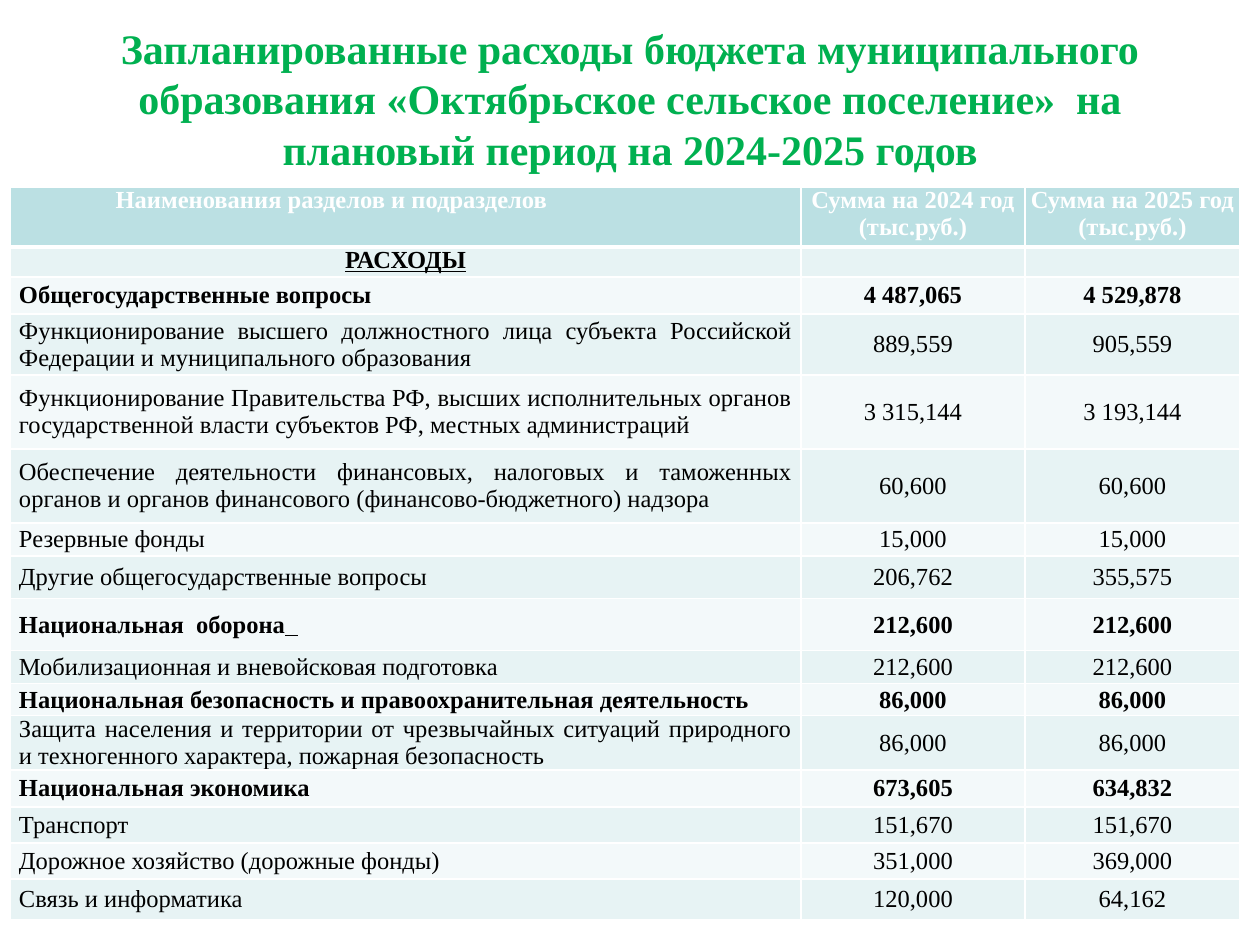
import dataclasses

import lxml.etree
import pptx
import pptx.dml.color
import pptx.enum.text
import pptx.oxml.ns
import pptx.util

ALIGN = pptx.enum.text.PP_ALIGN
ANCHOR = pptx.enum.text.MSO_ANCHOR
EMU_PER_PX = 914400 / 126


@dataclasses.dataclass(frozen=True)
class Theme:
    font: str = "Times New Roman"
    title_size: int = 24
    table_size: int = 14
    title: str = "00B050"
    text: str = "000000"
    white: str = "FFFFFF"
    header_fill: str = "BBE0E3"
    band_fills: tuple = ("E7F3F4", "F3F9FA")


THEME = Theme()

TITLE = ("Запланированные расходы бюджета муниципального образования "
         "«Октябрьское сельское поселение»  на плановый период на 2024-2025 годов")
HEADERS = ("Наименования разделов и подразделов",
           "Сумма на 2024 год (тыс.руб.)", "Сумма на 2025 год (тыс.руб.)")
SUBHEADER = "РАСХОДЫ"
DEFENCE = "Национальная  оборона"
LEFT_ALIGNED = (DEFENCE, "Мобилизационная и вневойсковая подготовка")
# Name, 2024 sum, 2025 sum, whether it is a section total, row height
EXPENSES = [
    ("Общегосударственные вопросы", "4\u00a0487,065", "4\u00a0529,878", True, 37),
    ("Функционирование высшего должностного лица субъекта Российской Федерации "
     "и муниципального образования", "889,559", "905,559", False, 61),
    ("Функционирование Правительства РФ, высших исполнительных органов "
     "государственной власти субъектов РФ, местных администраций",
     "3\u00a0315,144", "3\u00a0193,144", False, 74),
    ("Обеспечение деятельности финансовых, налоговых и таможенных органов и органов "
     "финансового (финансово-бюджетного) надзора", "60,600", "60,600", False, 74),
    ("Резервные фонды", "15,000", "15,000", False, 33),
    ("Другие общегосударственные вопросы", "206,762", "355,575", False, 43),
    (DEFENCE, "212,600", "212,600", True, 52),
    (LEFT_ALIGNED[1], "212,600", "212,600", False, 33),
    ("Национальная безопасность и правоохранительная деятельность",
     "86,000", "86,000", True, 32),
    ("Защита населения и территории от чрезвычайных ситуаций природного "
     "и техногенного характера, пожарная безопасность", "86,000", "86,000", False, 54),
    ("Национальная экономика", "673,605", "634,832", True, 37),
    ("Транспорт", "151,670", "151,670", False, 36),
    ("Дорожное хозяйство (дорожные фонды)", "351,000", "369,000", False, 36),
    ("Связь и информатика", "120,000", "64,162", False, 41),
]
HEADER_HEIGHT, SUBHEADER_HEIGHT = 60, 30
COLUMN_WIDTHS = (791, 224, 215)


def px(length):
    return pptx.util.Emu(round(length * EMU_PER_PX))


def rgb(value):
    return pptx.dml.color.RGBColor.from_string(value)


def style_paragraph(para, size, color, align, bold):
    para.alignment = align
    para.font.name = THEME.font
    para.font.size = pptx.util.Pt(size)
    para.font.bold = bold
    para.font.color.rgb = rgb(color)


def set_borders(cell, top=1, bottom=1):
    properties = cell._tc.get_or_add_tcPr()
    qn = pptx.oxml.ns.qn
    for side, width in (("L", 1), ("R", 1), ("T", top), ("B", bottom)):
        line = lxml.etree.SubElement(properties, qn(f"a:ln{side}"),
                                     w=str(pptx.util.Pt(width)))
        fill = lxml.etree.SubElement(line, qn("a:solidFill"))
        lxml.etree.SubElement(fill, qn("a:srgbClr"), val=THEME.white)


def fill_cell(cell, text, fill, color, align=ALIGN.CENTER, bold=False,
              anchor=ANCHOR.TOP, insets=(5, 5), top=1, bottom=1):
    set_borders(cell, top, bottom)
    cell.fill.solid()
    cell.fill.fore_color.rgb = rgb(fill)
    cell.margin_left, cell.margin_right = map(px, insets)
    cell.margin_top = cell.margin_bottom = 0
    cell.vertical_anchor = anchor
    para = cell.text_frame.paragraphs[0]
    if text:
        para.add_run().text = text
    else:
        # An empty cell keeps the row low only with its own type size
        lxml.etree.SubElement(para._p, pptx.oxml.ns.qn("a:endParaRPr"),
                              sz=str(THEME.table_size * 100))
    style_paragraph(para, THEME.table_size, color, align, bold)
    return para


def place_title(page, left, top, width, height):
    box = page.shapes.title
    box.left, box.top, box.width, box.height = map(px, (left, top, width, height))
    frame = box.text_frame
    frame.word_wrap = True
    frame.auto_size = pptx.enum.text.MSO_AUTO_SIZE.NONE
    frame.vertical_anchor = ANCHOR.MIDDLE
    frame.text = TITLE
    style_paragraph(frame.paragraphs[0], THEME.title_size, THEME.title,
                    ALIGN.CENTER, True)


def place_expense_table(page, left, top):
    heights = [HEADER_HEIGHT, SUBHEADER_HEIGHT] + [row[-1] for row in EXPENSES]
    table = page.shapes.add_table(
        len(heights), len(COLUMN_WIDTHS), px(left), px(top),
        px(sum(COLUMN_WIDTHS)), px(sum(heights))).table
    table.horz_banding = False
    for column, width in zip(table.columns, COLUMN_WIDTHS):
        column.width = px(width)
    for row, height in zip(table.rows, heights):
        row.height = px(height)

    # Header: the first caption sits left of the column's centre
    for column, text in enumerate(HEADERS):
        insets = (5, 153) if column == 0 else (5, 5)
        fill_cell(table.cell(0, column), text, THEME.header_fill, THEME.white,
                  bold=True, insets=insets, bottom=3)

    # Subheader
    for column, text in enumerate((SUBHEADER, "", "")):
        para = fill_cell(table.cell(1, column), text, THEME.band_fills[0],
                         THEME.text, bold=True, top=3)
        if text:
            para.font.underline = True

    # Expense rows
    for index, (name, *sums, is_total, _) in enumerate(EXPENSES, start=2):
        name_align = ALIGN.LEFT if name in LEFT_ALIGNED else ALIGN.JUSTIFY
        for column, text in enumerate((name, *sums)):
            para = fill_cell(
                table.cell(index, column), text, THEME.band_fills[(index - 1) % 2],
                THEME.text, align=ALIGN.CENTER if column else name_align,
                bold=is_total, anchor=ANCHOR.MIDDLE, insets=(9, 9))
            if text == DEFENCE:
                # Underlined tail after the section name
                span = para.add_run()
                span.text = "  "
                span.font.bold = False
                span.font.italic = span.font.underline = True


def main():
    deck = pptx.Presentation()
    deck.slide_width, deck.slide_height = px(1260), px(945)
    page = deck.slides.add_slide(deck.slide_layouts[5])
    place_title(page, 63, 38, 1134, 120)
    place_expense_table(page, 10, 187)
    deck.save("out.pptx")


if __name__ == "__main__":
    main()
